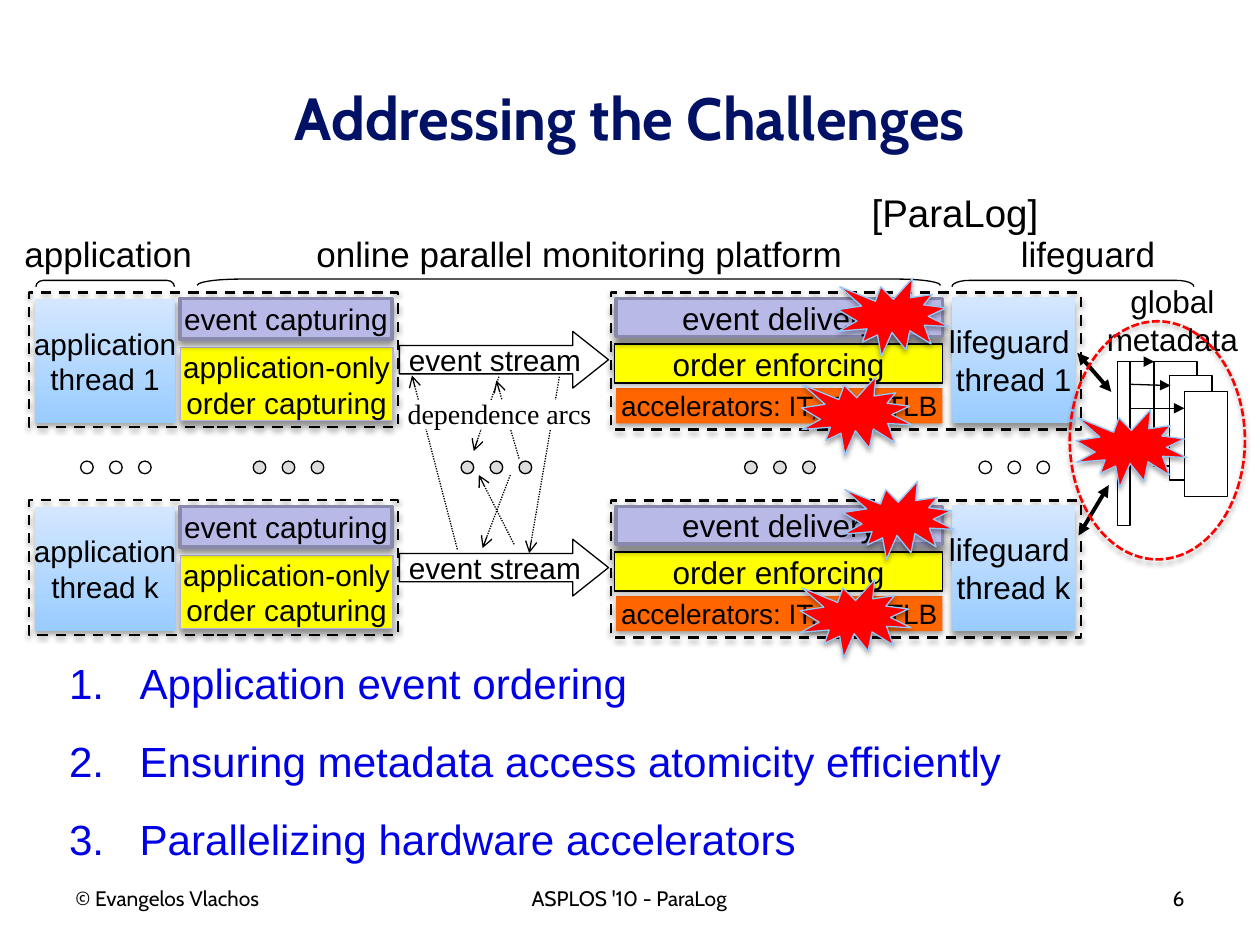
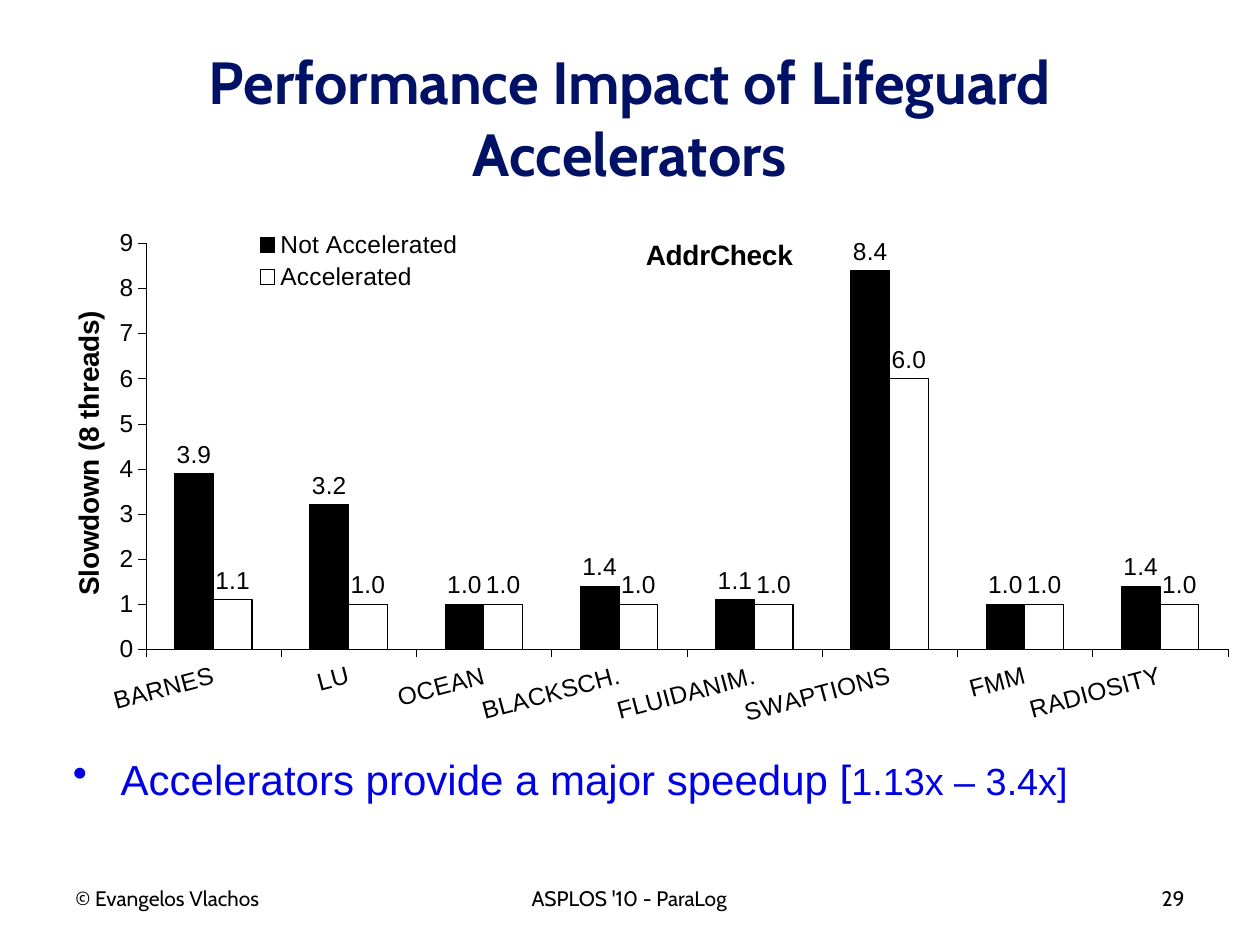
from lxml import etree
from pptx import Presentation
from pptx.chart import data as cd
from pptx.dml.color import RGBColor
from pptx.enum import chart as ec, dml, shapes, text
from pptx.oxml import ns
from pptx.util import Inches, Pt

BLACK = RGBColor(0, 0, 0)
WHITE = RGBColor(255, 255, 255)
NAVY = RGBColor(0x00, 0x11, 0x66)
BLUE = RGBColor(0x00, 0x00, 0xE6)
RED = RGBColor(255, 0, 0)
YELLOW = RGBColor(255, 255, 0)
ORANGE = RGBColor(0xFF, 0x66, 0x00)
LILAC = RGBColor(0xB9, 0xB9, 0xE7)
LILAC_EDGE = RGBColor(0x89, 0x89, 0xAB)
LILAC_LINE = RGBColor(0xB4, 0xB4, 0xE3)
SKY = RGBColor(0x99, 0xCC, 0xFF)
PALE_SKY = RGBColor(0xD4, 0xE7, 0xFF)
STAR_EDGE = RGBColor(0x93, 0xC8, 0xFC)
GREY = RGBColor(0xDD, 0xDD, 0xDD)
BODY_FONT, HEAD_FONT = "Arial", "Cabin"
SOFT = (35, 3.1, 1.8, 90)
STRONG = (43, 4, 3, 90)
GLOW = (43, 5, 0, 0)
ROW_STEP = 1.65
ST = shapes.MSO_SHAPE
AL = text.PP_ALIGN
DASH = dml.MSO_LINE


def sub(parent, tag, **attrs):
    el = etree.SubElement(parent, ns.qn(tag))
    for key, val in attrs.items():
        el.set(key, str(val))
    return el


def style_font(font, size, color=BLACK, name=BODY_FONT, bold=False):
    font.size, font.name, font.bold = Pt(size), name, bold
    font.color.rgb = color


def write(tf, words, size, color=BLACK, name=BODY_FONT, align=AL.CENTER, bold=False,
          anchor=text.MSO_ANCHOR.TOP, wrap=True):
    tf.text = words
    tf.word_wrap, tf.vertical_anchor = wrap, anchor
    for p in tf.paragraphs:
        p.alignment = align
        for r in p.runs:
            style_font(r.font, size, color, name, bold)


def add_text(s, at, words, size, **kw):
    sp = s.shapes.add_textbox(*map(Inches, at))
    write(sp.text_frame, words, size, **kw)


def add_shadow(sp, alpha, blur, dist, angle):
    lst = sp._element.spPr.find(ns.qn("a:effectLst"))
    sh = sub(lst, "a:outerShdw", blurRad=Pt(blur), dist=Pt(dist), dir=angle * 60000,
             algn="ctr", rotWithShape=0)
    sub(sub(sh, "a:srgbClr", val="000000"), "a:alpha", val=alpha * 1000)


def add_box(parent, at, kind=ST.RECTANGLE, fill=None, line=None, width=0.75, dash=None,
            shadow=None, words=None, size=17, adj=(), rot=0):
    sp = parent.shapes.add_shape(kind, *map(Inches, at))
    sp.shadow.inherit = False
    sp.rotation = rot
    for i, val in enumerate(adj):
        sp.adjustments[i] = val
    if fill == SKY:
        sp.fill.gradient()
        sp.fill.gradient_angle = 90
        for stop, color in zip(sp.fill.gradient_stops, (SKY, PALE_SKY)):
            stop.color.rgb = color
    elif fill is None:
        sp.fill.background()
    else:
        sp.fill.solid()
        sp.fill.fore_color.rgb = fill
    if line is None:
        sp.line.fill.background()
    else:
        sp.line.color.rgb, sp.line.width = line, Pt(width)
        if dash:
            sp.line.dash_style = dash
    if shadow:
        add_shadow(sp, *shadow)
    if words:
        write(sp.text_frame, words, size, anchor=text.MSO_ANCHOR.MIDDLE, wrap=False)
    return sp


def add_arrow(s, x1, y1, x2, y2, width=0.75, dash=None, tail="triangle", head=None):
    c = s.shapes.add_connector(shapes.MSO_CONNECTOR.STRAIGHT, *map(Inches, (x1, y1, x2, y2)))
    c.line.color.rgb, c.line.width = BLACK, Pt(width)
    if dash:
        c.line.dash_style = dash
    ln = c.line._get_or_add_ln()
    if head:
        sub(ln, "a:headEnd", type=head)
    sub(ln, "a:tailEnd", type=tail)
    sub(c._element.spPr, "a:effectLst")


def add_dots(s, x, y, fill=None):
    g = s.shapes.add_group_shape()
    for i in range(3):
        add_box(g, (x + 0.23 * i, y, 0.1, 0.1), ST.OVAL, fill, BLACK)


def add_bullets(s, at, items, indent, mark, **attrs):
    tf = s.shapes.add_textbox(*map(Inches, at)).text_frame
    tf.word_wrap = True
    for i, runs in enumerate(items):
        p = tf.add_paragraph() if i else tf.paragraphs[0]
        if i:
            p.space_before = Pt(15.6)
        pPr = p._p.get_or_add_pPr()
        pPr.set("marL", str(Inches(indent)))
        pPr.set("indent", str(-Inches(indent)))
        sub(pPr, mark, **attrs)
        for words, size in runs:
            r = p.add_run()
            r.text = words
            style_font(r.font, size, BLUE)


def start_slide(prs, title, number):
    s = prs.slides.add_slide(prs.slide_layouts[6])
    add_text(s, (0.5, 0.3, 9, 1.25), title, 34, color=NAVY, name=HEAD_FONT, bold=True,
             anchor=text.MSO_ANCHOR.MIDDLE)
    for x, w, words, align in ((0.5, 2.33, "© Evangelos Vlachos", AL.LEFT),
                               (1.58, 6.83, "ASPLOS '10 - ParaLog", AL.CENTER),
                               (7.17, 2.33, number, AL.RIGHT)):
        add_text(s, (x, 6.98, w, 0.52), words, 12, name=HEAD_FONT, align=align)
    return s


def add_thread_row(s, y, thread):
    for x, w, h in ((0.23, 2.93, 1.07), (4.85, 3.73, 1.09)):
        add_box(s, (x, y, w, h), line=BLACK, width=1.5, dash=DASH.DASH, shadow=SOFT)
    add_box(s, (4.89, y + 0.76, 2.59, 0.28), fill=ORANGE, shadow=SOFT,
            words="accelerators: IT, IF, MTLB", size=16)
    add_box(s, (3.17, y + 0.31, 1.66, 0.45), ST.RIGHT_ARROW, line=BLACK,
            words="event stream", adj=(0.5, 0.63))
    add_box(s, (1.43, y + 0.44, 1.69, 0.58), fill=YELLOW, line=LILAC_LINE, shadow=STRONG,
            words="application-only\vorder capturing")
    add_box(s, (4.88, y + 0.41, 2.6, 0.31), fill=YELLOW, line=BLACK, shadow=GLOW,
            words="order enforcing", size=18)
    add_box(s, (0.28, y + 0.05, 1.11, 0.99), fill=SKY, shadow=SOFT,
            words=f"application\vthread {thread}")
    add_box(s, (1.43, y + 0.05, 1.68, 0.32), fill=LILAC, line=LILAC_EDGE, width=2,
            shadow=STRONG, words="event capturing")
    add_box(s, (4.89, y + 0.05, 2.59, 0.3), fill=LILAC, line=LILAC_EDGE, width=2,
            shadow=STRONG, words="event delivery", size=18)
    add_box(s, (7.56, y + 0.04, 0.97, 1), fill=SKY, shadow=STRONG,
            words=f"lifeguard \vthread {thread}", size=18)


def add_metadata(s):
    add_text(s, (8.68, 2.19, 1.25, 0.71), "global\nmetadata", 18, wrap=False)
    for at in ((8.87, 2.87, 0.1, 1.3), (9.16, 2.87, 0.34, 0.83),
               (9.28, 2.98, 0.34, 0.83), (9.4, 3.11, 0.34, 0.83)):
        add_box(s, at, fill=WHITE, line=BLACK)
    for ends in ((8.87, 2.87, 9.16, 2.87), (8.97, 3.05, 9.29, 3.06), (8.97, 3.24, 9.4, 3.24)):
        add_arrow(s, *ends)
    for ends in ((8.55, 2.8, 8.82, 3.11), (8.56, 4.25, 8.8, 3.85)):
        add_arrow(s, *ends, width=2.25, head="triangle")
    add_box(s, (8.49, 2.55, 1.39, 1.89), ST.OVAL, line=RED, width=1.5,
            dash=DASH.SQUARE_DOT, shadow=SOFT)


def add_dependence_arcs(s):
    for ends in ((3.96, 2.99, 3.76, 3.58), (4.08, 4.32, 3.8, 3.77), (4.44, 2.99, 4.2, 4.39),
                 (3.63, 4.36, 3.27, 2.98), (4.12, 3.64, 3.94, 3.02), (4.05, 3.77, 3.83, 4.35)):
        add_arrow(s, *ends, dash=DASH.ROUND_DOT, tail="arrow")
    add_box(s, (3.25, 3.18, 1.47, 0.22), fill=WHITE, line=WHITE)
    add_text(s, (3.13, 3.1, 1.67, 0.37), "dependence arcs", 16, name="Times New Roman")


def build_challenges(prs):
    s = start_slide(prs, "Addressing the Challenges", "6")
    points = ("Application event ordering", "Ensuring metadata access atomicity efficiently",
              "Parallelizing hardware accelerators")
    add_bullets(s, (0.45, 5.17, 9, 1.68), [[(words, 24.1)] for words in points], 0.56,
                "a:buAutoNum", type="arabicPeriod")
    for x, w, words in ((0.08, 1.56, "application"), (7.99, 1.29, "lifeguard"),
                        (2.2, 4.8, "online parallel monitoring platform")):
        add_text(s, (x, 1.8, w, 0.44), words, 20)
    for x, y, length, adj in ((0.81, 1.7, 1.1, 1.17), (4.49, -0.71, 5.9, 6.79),
                              (8.49, 1.29, 1.92, 2.76)):
        add_box(s, (x, y, 0.05, length), ST.RIGHT_BRACKET, line=BLACK, adj=(adj,), rot=270)
    add_text(s, (6.82, 1.45, 1.54, 0.47), "[ParaLog]", 22, align=AL.LEFT, wrap=False)
    for i, thread in enumerate("1k"):
        add_thread_row(s, 2.32 + ROW_STEP * i, thread)
    for x, fill in ((0.64, None), (7.77, None), (2.01, GREY), (5.91, GREY), (3.66, GREY)):
        add_dots(s, x, 3.66, fill)
    add_dependence_arcs(s)
    add_metadata(s)
    for x, y in ((6.65, 2.21), (8.54, 3.25), (6.36, 2.99), (6.69, 3.82), (6.35, 4.6)):
        add_box(s, (x, y, 0.88, 0.62), ST.EXPLOSION1, RED, STAR_EDGE, shadow=SOFT)


def place(el, x, y, w=None, h=None, inner=False):
    old = el.find(ns.qn("c:layout"))
    if old is not None:
        el.remove(old)
    before = [c for c in el if c.tag in (ns.qn("c:tx"), ns.qn("c:legendPos"))]
    layout = etree.Element(ns.qn("c:layout"))
    el.insert(len(before), layout)
    manual = sub(layout, "c:manualLayout")
    if inner:
        sub(manual, "c:layoutTarget", val="inner")
    for tag in ("c:xMode", "c:yMode"):
        sub(manual, tag, val="edge")
    for tag, val in (("c:x", x), ("c:y", y), ("c:w", w), ("c:h", h)):
        if val is not None:
            sub(manual, tag, val=val)


def set_title(title, words, x, y):
    title.text_frame.text = words
    style_font(title.text_frame.paragraphs[0].runs[0].font, 16, bold=True)
    place(title._element, x, y)


def add_slowdown_chart(s):
    data = cd.CategoryChartData()
    data.categories = ["BARNES", "LU", "OCEAN", "BLACKSCH.", "FLUIDANIM.", "SWAPTIONS",
                       "FMM", "RADIOSITY"]
    data.add_series("Not Accelerated", (3.9, 3.2, 1, 1.4, 1.1, 8.4, 1, 1.4))
    data.add_series("Accelerated", (1.1, 1, 1, 1, 1, 6, 1, 1))
    at = map(Inches, (0.33, 1.76, 9.51, 4.17))
    ch = s.shapes.add_chart(ec.XL_CHART_TYPE.COLUMN_CLUSTERED, *at, data).chart
    style_font(ch.font, 14)
    ch.has_title = True
    set_title(ch.chart_title, "AddrCheck", 0.5, 0.02)
    ch.has_legend = True
    ch.legend.position = ec.XL_LEGEND_POSITION.RIGHT
    ch.legend.include_in_layout = False
    style_font(ch.legend.font, 14)
    place(ch.legend._element, 0.17, 0.01, 0.19, 0.13)
    place(ch._chartSpace.chart.plotArea, 0.087, 0.041, 0.903, 0.773, inner=True)

    for axis in (ch.category_axis, ch.value_axis):
        axis.has_major_gridlines = False
        axis.major_tick_mark = ec.XL_TICK_MARK.OUTSIDE
        axis.minor_tick_mark = ec.XL_TICK_MARK.NONE
        axis.format.line.color.rgb, axis.format.line.width = BLACK, Pt(0.17)
        style_font(axis.tick_labels.font, 14)
    ch.category_axis._element.txPr.bodyPr.set("rot", str(-15 * 60000))
    va = ch.value_axis
    va.minimum_scale, va.maximum_scale, va.major_unit = 0, 9, 1
    va.tick_labels.number_format, va.tick_labels.number_format_is_linked = "0", False
    set_title(va.axis_title, "Slowdown (8 threads)", 0.02, 0.16)
    body = va.axis_title.text_frame._txBody.bodyPr
    body.set("rot", "-5400000")
    body.set("vert", "horz")

    plot = ch.plots[0]
    plot.vary_by_categories, plot.gap_width, plot.overlap = False, 150, 0
    for series, fill in zip(plot.series, (BLACK, None)):
        if fill is None:
            series.format.fill.background()
        else:
            series.format.fill.solid()
            series.format.fill.fore_color.rgb = fill
        series.format.line.color.rgb, series.format.line.width = BLACK, Pt(0.68)
        labels = series.data_labels
        labels.show_value = True
        labels.number_format, labels.number_format_is_linked = "0.0", False
        labels.position = ec.XL_LABEL_POSITION.OUTSIDE_END
        style_font(labels.font, 14)


def build_performance(prs):
    s = start_slide(prs, "Performance Impact of Lifeguard Accelerators", "29")
    add_bullets(s, (0.48, 5.93, 9, 0.98),
                [[("Accelerators provide a major speedup [", 24), ("1.13x – 3.4x]", 21.6)]],
                0.38, "a:buChar", char="•")
    add_slowdown_chart(s)


def main():
    prs = Presentation()
    prs.slide_width, prs.slide_height = Inches(10), Inches(7.5)
    build_challenges(prs)
    build_performance(prs)
    prs.save("out.pptx")


if __name__ == "__main__":
    main()
